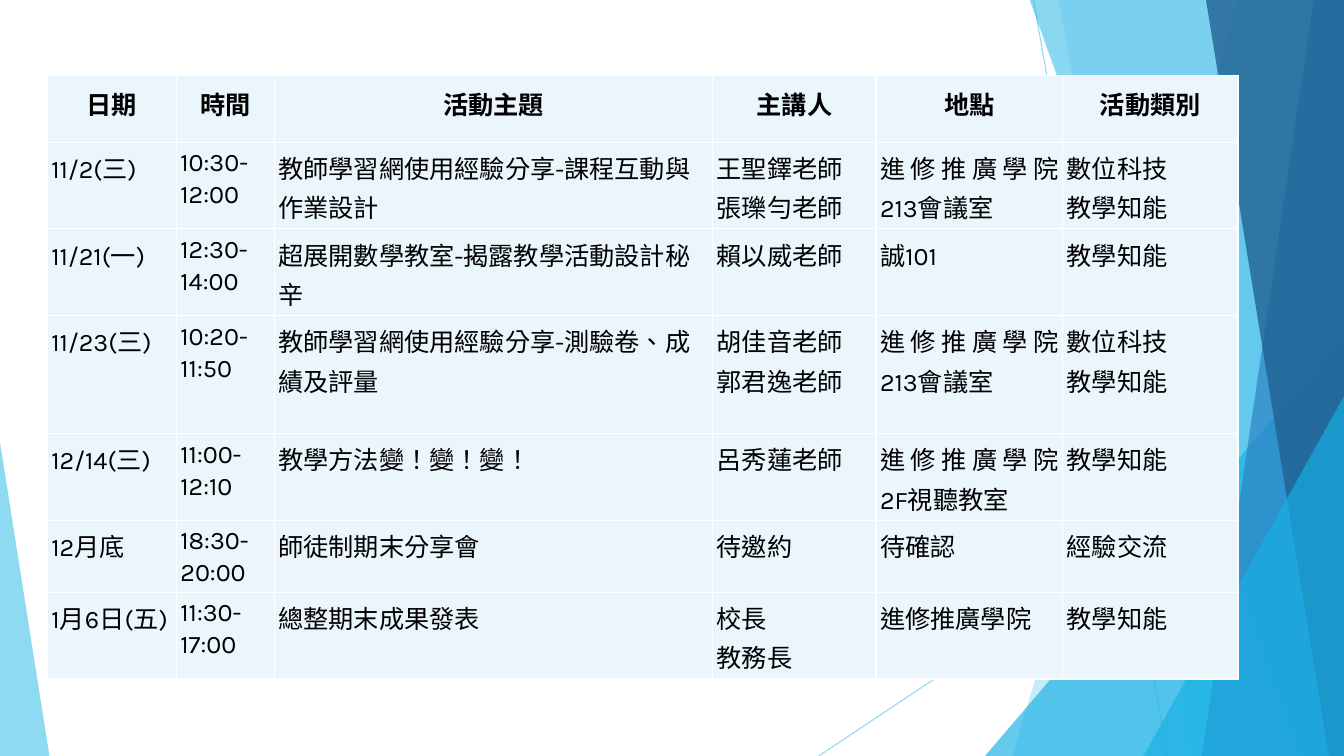
from lxml import etree
from pptx import Presentation
from pptx.dml.color import RGBColor
from pptx.enum.lang import MSO_LANGUAGE_ID as LANG
from pptx.enum.shapes import MSO_CONNECTOR as CONNECTOR, MSO_SHAPE as SHAPE
from pptx.enum.text import PP_ALIGN as ALIGN
from pptx.oxml.ns import qn
from pptx.util import Inches, Pt

COLOURS = {"sky": "5FCBEF", "azure": "17B0E4", "blue": "2E83C3", "navy": "226292",
           "cell": "EAF6FC", "border": "FFFFFF", "text": "000000"}
RIGHT, TOP, BOTTOM = 13.33, -0.01, 7.5


def set_colour(fill, colour, opacity):
    fill.solid()
    fill.fore_color.rgb = RGBColor.from_string(COLOURS[colour])
    for srgb in fill._xPr.iter(qn("a:srgbClr")):
        etree.SubElement(srgb, qn("a:alpha"), val=str(opacity * 1000))


prs = Presentation()
prs.slide_width, prs.slide_height = Inches(13.33), Inches(7.5)
slide = prs.slides.add_slide(prs.slide_layouts[6])
shapes = slide.shapes

# Thin lines behind the facets
for x1, y1, x2, y2 in [(10.25, 0, 11.58, 7.5), (13.33, 4.03, 8.12, 7.5)]:
    ray = shapes.add_connector(CONNECTOR.STRAIGHT, Inches(x1), Inches(y1), Inches(x2), Inches(y2))
    ray.line.width = Pt(0.75)
    set_colour(ray.line.fill, "sky", 70)
    etree.SubElement(ray._element.spPr, qn("a:effectLst"))

# Facets: a band has its left edge's top and bottom x, a triangle its box and apex
facets = [
    ("band", (12.28, 10.04), None, "sky", 36),
    ("band", (10.5, 11.83), None, "sky", 20),
    ("triangle", (9.77, 3.33, 3.56, 4.17), 1, "azure", 66),
    ("band", (10.21, 12.91), None, "azure", 50),
    ("band", (13.03, 11.92), None, "blue", 70),
    ("band", (11.96, 13.18), None, "navy", 80),
    ("triangle", (11.34, 3.93, 1.99, 3.57), 1, "azure", 66),
    ("triangle", (0, 4.39, 0.49, 3.11), 0, "sky", 70),
]
for kind, place, apex, colour, opacity in facets:
    if kind == "band":
        top_x, bottom_x = place
        outline = shapes.build_freeform(Inches(top_x), Inches(TOP))
        corners = [(RIGHT, TOP), (RIGHT, BOTTOM), (bottom_x, BOTTOM)]
        outline.add_line_segments([(Inches(x), Inches(y)) for x, y in corners], close=True)
        facet = outline.convert_to_shape()
    else:
        facet = shapes.add_shape(SHAPE.ISOSCELES_TRIANGLE, *[Inches(v) for v in place])
        facet.adjustments[0] = apex
    facet.shadow.inherit = False
    facet.line.fill.background()
    set_colour(facet.fill, colour, opacity)

# Activity schedule
schedule = [
    ["日期", "時間", "活動主題", "主講人", "地點", "活動類別"],
    ["11/2(三)", "10:30-12:00", "教師學習網使用經驗分享-課程互動與作業設計",
     "王聖鐸老師\n張瓅勻老師", "進修推廣學院213會議室", "數位科技\n教學知能"],
    ["11/21(一)", "12:30-14:00", "超展開數學教室-揭露教學活動設計秘辛",
     "賴以威老師", "誠101", "教學知能"],
    ["11/23(三)", "10:20-11:50", "教師學習網使用經驗分享-測驗卷、成績及評量",
     "胡佳音老師\n郭君逸老師", "進修推廣學院213會議室", "數位科技\n教學知能"],
    ["12/14(三)", "11:00-12:10", "教學方法變！變！變！",
     "呂秀蓮老師", "進修推廣學院2F視聽教室", "教學知能"],
    ["12月底", "18:30-20:00", "師徒制期末分享會", "待邀約", "待確認", "經驗交流"],
    ["1月6日(五)", "11:30-\n17:00", "總整期末成果發表",
     "校長\n教務長", "進修推廣學院", "教學知能"],
]
column_widths = [1.28, 0.97, 4.35, 1.62, 1.85, 1.74]
row_heights = [0.66, 0.85, 0.86, 1.17, 0.85, 0.71, 0.86]
TOPIC = 2

table = shapes.add_table(len(row_heights), len(column_widths), Inches(0.47), Inches(0.75),
                         Inches(sum(column_widths)), Inches(sum(row_heights))).table
table.first_row = table.horz_banding = False
for column, width in zip(table.columns, column_widths):
    column.width = Inches(width)
for row, height in zip(table.rows, row_heights):
    row.height = Inches(height)

margins = {side: Inches(0.04) for side in
           ("margin_left", "margin_right", "margin_top", "margin_bottom")}
for r, entries in enumerate(schedule):
    header = r == 0
    font_format = {"name": "Karla", "size": Pt(18), "bold": header,
                   "language_id": LANG.TRADITIONAL_CHINESE}
    for c, entry in enumerate(entries):
        cell = table.cell(r, c)
        cell.text = entry
        for name, value in margins.items():
            setattr(cell, name, value)
        cell.fill.solid()
        cell.fill.fore_color.rgb = RGBColor.from_string(COLOURS["cell"])

        # White borders go before the cell fill
        for i, side in enumerate(("lnL", "lnR", "lnT", "lnB")):
            border = etree.Element(qn("a:" + side), w=str(Pt(1)))
            solid = etree.SubElement(border, qn("a:solidFill"))
            etree.SubElement(solid, qn("a:srgbClr"), val=COLOURS["border"])
            cell._tc.tcPr.insert(i, border)

        for paragraph in cell.text_frame.paragraphs:
            paragraph.line_spacing = 1.15 if header else 1.08
            if header:
                paragraph.alignment = ALIGN.CENTER
            else:
                paragraph.alignment = ALIGN.LEFT if c == TOPIC else ALIGN.JUSTIFY
            for run in paragraph.runs:
                for name, value in font_format.items():
                    setattr(run.font, name, value)
                run.font.color.rgb = RGBColor.from_string(COLOURS["text"])

prs.save("out.pptx")
